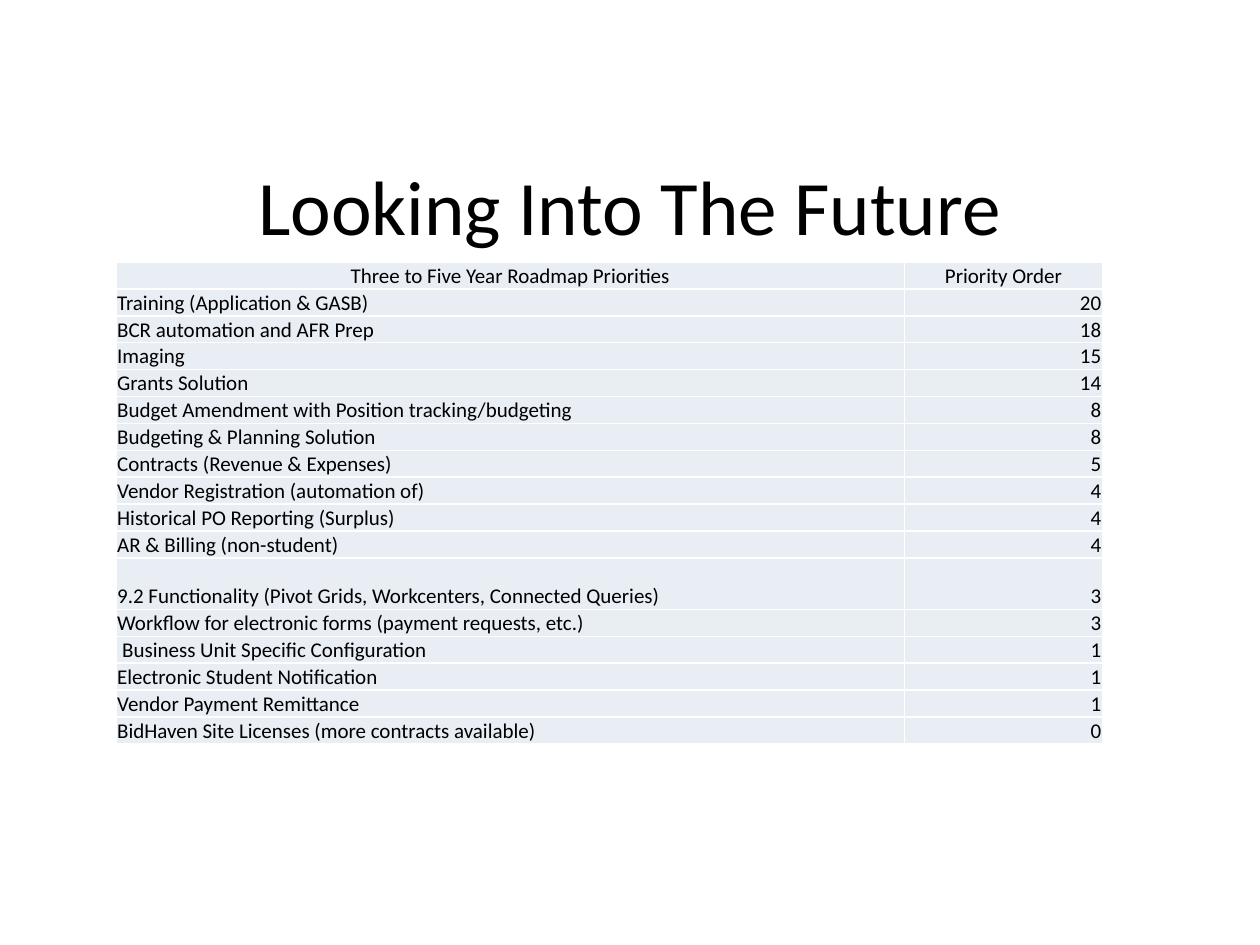
from pptx import Presentation
from pptx.dml.color import RGBColor
from pptx.enum.text import MSO_ANCHOR, PP_ALIGN
from pptx.oxml import parse_xml
from pptx.oxml.ns import nsdecls
from pptx.util import Inches, Pt

BLACK = RGBColor(0x00, 0x00, 0x00)
PALE_BLUE = RGBColor(0xE9, 0xED, 0xF4)
BORDER = "FFFFFF"
FONT = "Calibri"

HEADER = ("Three to Five Year Roadmap Priorities", "Priority Order")
PRIORITIES = [
    ("Training (Application & GASB)", 20),
    ("BCR automation and AFR Prep", 18),
    ("Imaging", 15),
    ("Grants Solution", 14),
    ("Budget Amendment with Position tracking/budgeting", 8),
    ("Budgeting & Planning Solution", 8),
    ("Contracts (Revenue & Expenses)", 5),
    ("Vendor Registration (automation of)", 4),
    ("Historical PO Reporting (Surplus)", 4),
    ("AR & Billing (non-student)", 4),
    ("9.2 Functionality (Pivot Grids, Workcenters, Connected Queries)", 3),
    ("Workflow for electronic forms (payment requests, etc.)", 3),
    ("Business Unit Specific Configuration", 1),
    ("Electronic Student Notification", 1),
    ("Vendor Payment Remittance", 1),
    ("BidHaven Site Licenses (more contracts available)", 0),
]
TALL_ROW = 11
INDENTED_ROW = 13


def format_paragraph(p, size, align):
    p.alignment = align
    for r in p.runs:
        r.font.name = FONT
        r.font.size = Pt(size)
        r.font.bold = False
        r.font.color.rgb = BLACK


def add_title(s, left, top, width, height):
    title = s.shapes.title
    title.left, title.top = Inches(left), Inches(top)
    title.width, title.height = Inches(width), Inches(height)
    tf = title.text_frame
    tf.text = "Looking Into The Future"
    tf.vertical_anchor = MSO_ANCHOR.MIDDLE
    format_paragraph(tf.paragraphs[0], 44, PP_ALIGN.CENTER)


def set_borders(cell):
    tc_pr = cell._tc.get_or_add_tcPr()
    for side in ("lnL", "lnR", "lnT", "lnB"):
        tc_pr.append(parse_xml(
            f'<a:{side} {nsdecls("a")} w="{Pt(1)}"><a:solidFill>'
            f'<a:srgbClr val="{BORDER}"/></a:solidFill></a:{side}>'))


def fill_cell(cell, text, align, indent=0.01):
    set_borders(cell)
    cell.fill.solid()
    cell.fill.fore_color.rgb = PALE_BLUE
    cell.vertical_anchor = MSO_ANCHOR.BOTTOM
    cell.margin_left = Inches(indent)
    cell.margin_right = cell.margin_top = Inches(0.01)
    cell.margin_bottom = Inches(0)
    cell.text = str(text)
    format_paragraph(cell.text_frame.paragraphs[0], 12, align)


def add_priority_table(s, left, top, width, height):
    rows = [HEADER, *PRIORITIES]
    table = s.shapes.add_table(len(rows), 2, Inches(left), Inches(top),
                               Inches(width), Inches(height)).table
    table.first_row = table.horz_banding = False
    order_width = 1.57
    table.columns[0].width = Inches(width - order_width)
    table.columns[1].width = Inches(order_width)

    tall = 0.41
    row_height = (height - tall) / (len(rows) - 1)
    for i, (name, order) in enumerate(rows):
        table.rows[i].height = Inches(tall if i == TALL_ROW else row_height)
        header = i == 0
        fill_cell(table.cell(i, 0), name,
                  PP_ALIGN.CENTER if header else PP_ALIGN.LEFT,
                  0.05 if i == INDENTED_ROW else 0.01)
        fill_cell(table.cell(i, 1), order,
                  PP_ALIGN.CENTER if header else PP_ALIGN.RIGHT)


def main():
    prs = Presentation()
    prs.slide_width, prs.slide_height = Inches(10), Inches(7.5)
    s = prs.slides.add_slide(prs.slide_layouts[5])
    add_title(s, 0.5, 1, 9, 1.25)
    add_priority_table(s, 0.92, 2.08, 7.83, 3.83)
    prs.save("out.pptx")


if __name__ == "__main__":
    main()
